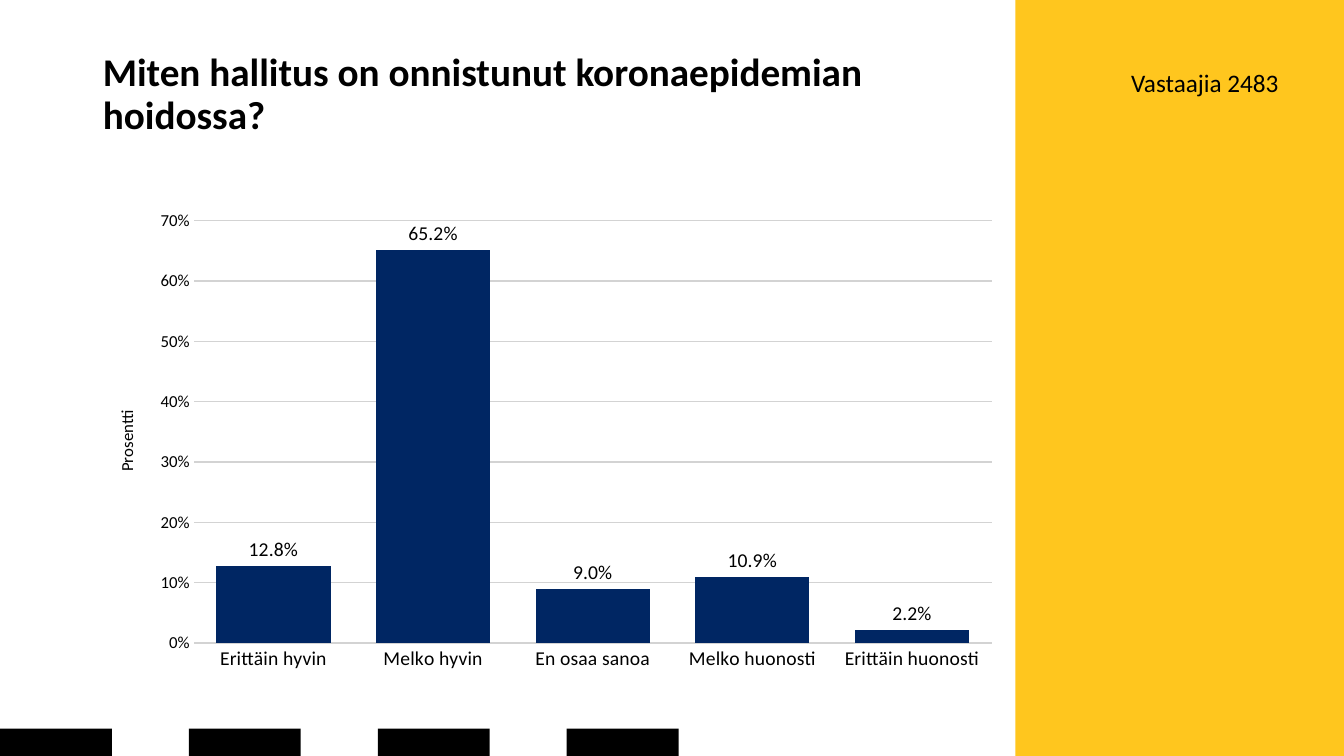
from lxml import etree
from pptx import Presentation
from pptx.chart.data import CategoryChartData
from pptx.dml.color import RGBColor
from pptx.enum import chart as charts, shapes, text
from pptx.oxml import parse_xml
from pptx.oxml.ns import nsdecls
from pptx.util import Inches, Pt

YELLOW = RGBColor(0xFF, 0xC6, 0x1E)
NAVY = RGBColor(0x00, 0x26, 0x63)
BLACK = RGBColor(0, 0, 0)
WHITE = RGBColor(0xFF, 0xFF, 0xFF)
GRID = RGBColor(0xD3, 0xD3, 0xD3)
FONT = "Calibri"

ANSWERS = {
    "Erittäin hyvin": 0.128,
    "Melko hyvin": 0.652,
    "En osaa sanoa": 0.09,
    "Melko huonosti": 0.109,
    "Erittäin huonosti": 0.022,
}


def style_font(font, size, bold=False):
    font.name = FONT
    font.size = Pt(size)
    font.bold = bold
    font.color.rgb = BLACK


def add_block(page, left, top, width, height, color):
    block = page.shapes.add_shape(
        shapes.MSO_SHAPE.RECTANGLE,
        Inches(left), Inches(top), Inches(width), Inches(height))
    block.shadow.inherit = False
    block.fill.solid()
    block.fill.fore_color.rgb = color
    block.line.fill.background()


def add_footer_blocks(page, left, top, width, height, count=4):
    block_width = 1.11
    step = (width - block_width) / (count - 1)
    for index in range(count):
        add_block(page, left + index * step, top, block_width, height, BLACK)


def place_title(page, left, top, width, height):
    title = page.shapes.title
    title.left, title.top = Inches(left), Inches(top)
    title.width, title.height = Inches(width), Inches(height)
    frame = title.text_frame
    frame.word_wrap = True
    frame.auto_size = text.MSO_AUTO_SIZE.NONE
    frame.vertical_anchor = text.MSO_ANCHOR.MIDDLE
    frame.text = "Miten hallitus on onnistunut koronaepidemian hoidossa?"
    para = frame.paragraphs[0]
    para.alignment = text.PP_ALIGN.LEFT
    para.line_spacing = 0.9
    style_font(para.font, 28, bold=True)


def add_sidebar(page, left, top, width, height):
    add_block(page, left, top, width, height, YELLOW)
    box = page.shapes.add_textbox(
        Inches(left + 0.64), Inches(top + 0.62), Inches(2.07), Inches(0.4))
    frame = box.text_frame
    frame.word_wrap = True
    frame.auto_size = text.MSO_AUTO_SIZE.SHAPE_TO_FIT_TEXT
    frame.text = "Vastaajia 2483"
    para = frame.paragraphs[0]
    para.alignment = text.PP_ALIGN.RIGHT
    style_font(para.font, 18)


def style_axis(axis, size):
    axis.major_tick_mark = charts.XL_TICK_MARK.INSIDE
    axis.minor_tick_mark = charts.XL_TICK_MARK.NONE
    axis.format.line.fill.background()
    style_font(axis.tick_labels.font, size)


def style_plot_area(chart, x, y, width, height):
    area = chart.plots[0]._element.getparent()
    for old in area.findall("{*}layout"):
        area.remove(old)
    layout = parse_xml(
        f'<c:layout {nsdecls("c")}><c:manualLayout>'
        '<c:layoutTarget val="inner"/><c:xMode val="edge"/><c:yMode val="edge"/>'
        f'<c:x val="{x}"/><c:y val="{y}"/><c:w val="{width}"/><c:h val="{height}"/>'
        '</c:manualLayout></c:layout>')
    area.insert(0, layout)
    fill = parse_xml(
        f'<c:spPr {nsdecls("c", "a")}><a:solidFill>'
        f'<a:srgbClr val="{WHITE}"/></a:solidFill></c:spPr>')
    area.append(fill)


def add_answer_chart(page, left, top, width, height):
    data = CategoryChartData(number_format="0.0%")
    data.categories = list(ANSWERS)
    data.add_series("Series 1", list(ANSWERS.values()))
    chart = page.shapes.add_chart(
        charts.XL_CHART_TYPE.COLUMN_CLUSTERED,
        Inches(left), Inches(top), Inches(width), Inches(height), data).chart
    style_font(chart.font, 11)
    chart.has_legend = False
    chart.has_title = False

    plot = chart.plots[0]
    plot.gap_width = 40
    plot.vary_by_categories = False
    series = plot.series[0]
    series.format.fill.solid()
    series.format.fill.fore_color.rgb = NAVY
    labels = series.data_labels
    labels.show_value = True
    labels.position = charts.XL_LABEL_POSITION.OUTSIDE_END
    labels.number_format = "0.0%"
    labels.number_format_is_linked = False
    style_font(labels.font, 14)

    style_axis(chart.category_axis, 14)
    values = chart.value_axis
    style_axis(values, 12)
    values.minimum_scale = 0
    values.maximum_scale = 0.7
    values.major_unit = 0.1
    values.tick_labels.number_format = "0%"
    values.tick_labels.number_format_is_linked = False
    values.has_major_gridlines = True
    values.major_gridlines.format.line.color.rgb = GRID
    values.major_gridlines.format.line.width = Pt(1)
    values.has_title = True
    values.axis_title.text_frame.text = "Prosentti"
    style_font(values.axis_title.text_frame.paragraphs[0].font, 12)
    style_plot_area(chart, 0.11, 0.04, 0.87, 0.88)


def main():
    deck = Presentation()
    deck.slide_width = Inches(13.33)
    deck.slide_height = Inches(7.5)
    page = deck.slides.add_slide(deck.slide_layouts[5])
    add_sidebar(page, 10.07, 0, 3.26, 7.5)
    add_footer_blocks(page, 0, 7.23, 6.73, 0.27)
    place_title(page, 0.92, 0.4, 9.1, 1.09)
    add_answer_chart(page, 0.92, 2, 9.1, 4.76)
    deck.save("out.pptx")


if __name__ == "__main__":
    main()
